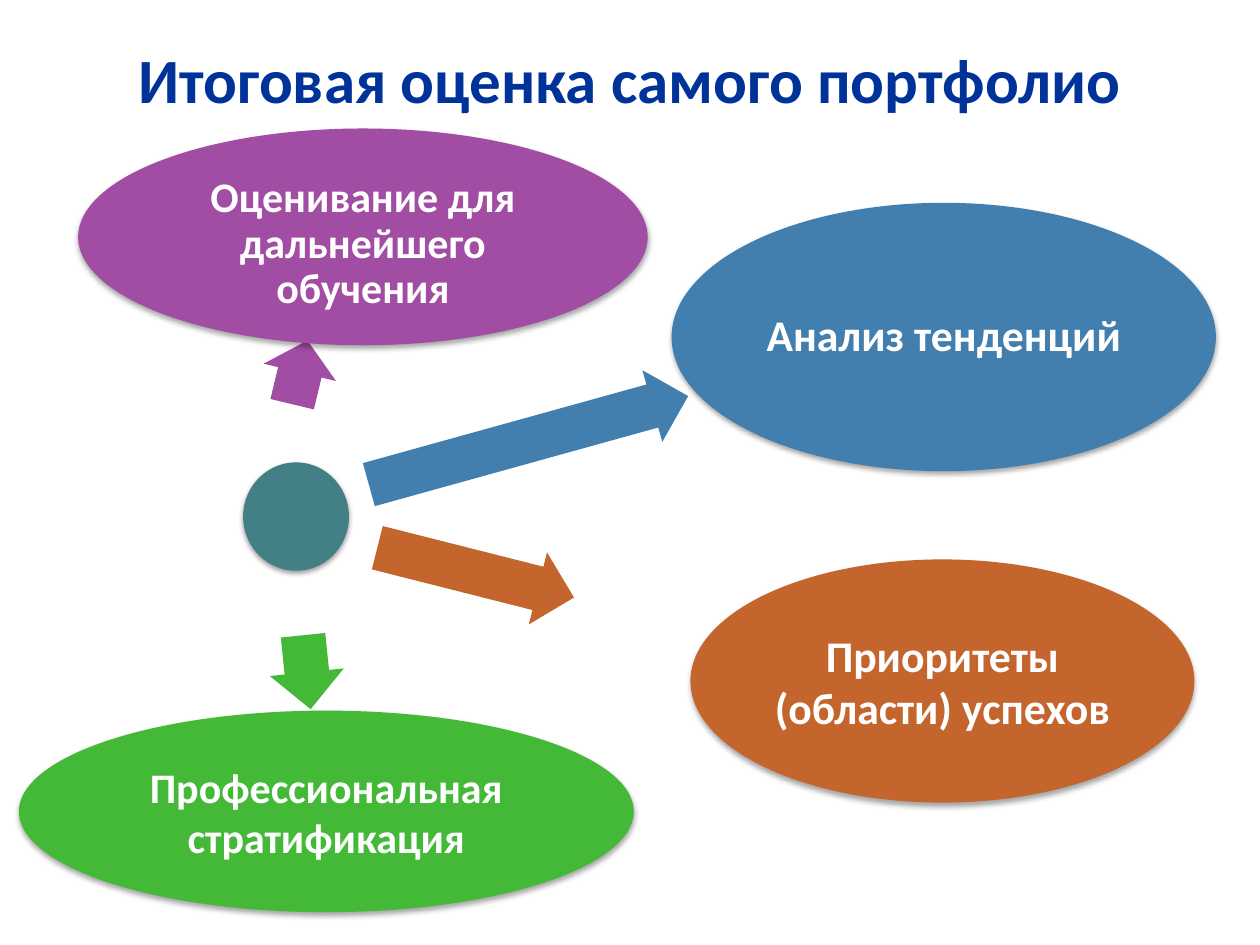
from lxml.etree import SubElement
from pptx import Presentation
from pptx.dml.color import RGBColor
from pptx.enum.shapes import MSO_SHAPE as Shape
from pptx.enum.text import MSO_ANCHOR as Anchor, PP_ALIGN as Align
from pptx.oxml.ns import qn
from pptx.util import Inches, Pt

COLORS = {
    "title": "003399", "white": "FFFFFF", "shadow": "000000", "hub": "438086",
    "purple": "A04DA3", "blue": "427FAE", "green": "44B938", "orange": "C4652D",
}
CELL = 0.1  # inches: the slide is a grid of 100 columns and 75 rows
TITLE_BOX = (0, 2.3, 100, 7.9)
DIAGRAM_BOX = (0, 10, 100, 65)

# Columns and rows are counted from the corner of the diagram
HUB = (19.3, 26.7, 8.4, 8.6)
BRANCHES = [
    dict(color="purple", arrow=(21.2, 16.6, 5.2, 5.9), angle=283.5,
         oval=(6.2, 0.2, 45.2, 17.2), label="Оценивание для дальнейшего обучения",
         size=24, spacing=0.9, top=0.15),
    dict(color="blue", arrow=(28.8, 22, 26.3, 5.9), angle=344.5,
         oval=(53.3, 6.1, 43.2, 21.3), label="Анализ тенденций",
         size=25, spacing=0.9),
    dict(color="green", arrow=(21.4, 40.4, 5.9, 5.9), angle=84.1,
         oval=(1.5, 46.4, 48.8, 16), label="Профессиональная стратификация",
         size=24),
    dict(color="orange", arrow=(29.7, 32.5, 16.1, 5.9), angle=14.2,
         oval=(54.8, 34.4, 40, 19.3), label="Приоритеты (области) успехов",
         size=25),
]


def rgb(name):
    return RGBColor.from_string(COLORS[name])


def place(box, part):
    """Turn a part's cells within a box into slide lengths."""
    left, top = box[:2]
    col, row, width, height = part
    return [Inches(n * CELL) for n in (left + col, top + row, width, height)]


def write(shape, text, size, color="white", spacing=1.0, margin=0.03, top=None):
    frame = shape.text_frame
    frame.word_wrap = True
    frame.vertical_anchor = Anchor.MIDDLE
    frame.margin_left = frame.margin_right = frame.margin_bottom = Inches(margin)
    frame.margin_top = Inches(margin if top is None else top)
    paragraph = frame.paragraphs[0]
    paragraph.alignment = Align.CENTER
    paragraph.line_spacing = spacing
    run = paragraph.add_run()
    run.text = text
    run.font.name = "Calibri"
    run.font.size = Pt(size)
    run.font.bold = True
    run.font.color.rgb = rgb(color)


def add_filled(slide, kind, position, color):
    shape = slide.shapes.add_shape(kind, *position)
    shape.fill.solid()
    shape.fill.fore_color.rgb = rgb(color)
    shape.line.fill.background()
    shape.shadow.inherit = False
    return shape


def add_oval(slide, position, color, opacity=35, distance=1.8):
    """Add an ellipse with a soft shadow below it."""
    oval = add_filled(slide, Shape.OVAL, position, color)
    effects = oval._element.spPr.find(qn("a:effectLst"))
    shadow = SubElement(effects, qn("a:outerShdw"), blurRad=str(Pt(3.1)),
                        dist=str(Pt(distance)), dir=str(90 * 60000),
                        rotWithShape="0")
    tint = SubElement(shadow, qn("a:srgbClr"), val=COLORS["shadow"])
    SubElement(tint, qn("a:alpha"), val=str(opacity * 1000))
    return oval


def add_arrow(slide, position, color, angle):
    arrow = add_filled(slide, Shape.RIGHT_ARROW, position, color)
    arrow.adjustments[0] = 0.6
    arrow.adjustments[1] = 0.5
    arrow.rotation = angle


def add_title(slide, box, text):
    title = slide.shapes.title
    title.left, title.top, title.width, title.height = place((0, 0), box)
    write(title, text, 36, color="title", margin=0.05)


def add_branch(slide, box, color, arrow, angle, oval, label, **text_format):
    add_arrow(slide, place(box, arrow), color, angle)
    write(add_oval(slide, place(box, oval), color), label, **text_format)


def add_diagram(slide, box):
    add_oval(slide, place(box, HUB), "hub", opacity=38, distance=1.6)
    for branch in BRANCHES:
        add_branch(slide, box, **branch)


def main():
    deck = Presentation()
    deck.slide_width, deck.slide_height = Inches(10), Inches(7.5)
    slide = deck.slides.add_slide(deck.slide_layouts[5])
    add_title(slide, TITLE_BOX, "Итоговая оценка самого портфолио")
    add_diagram(slide, DIAGRAM_BOX)
    deck.save("out.pptx")


if __name__ == "__main__":
    main()
